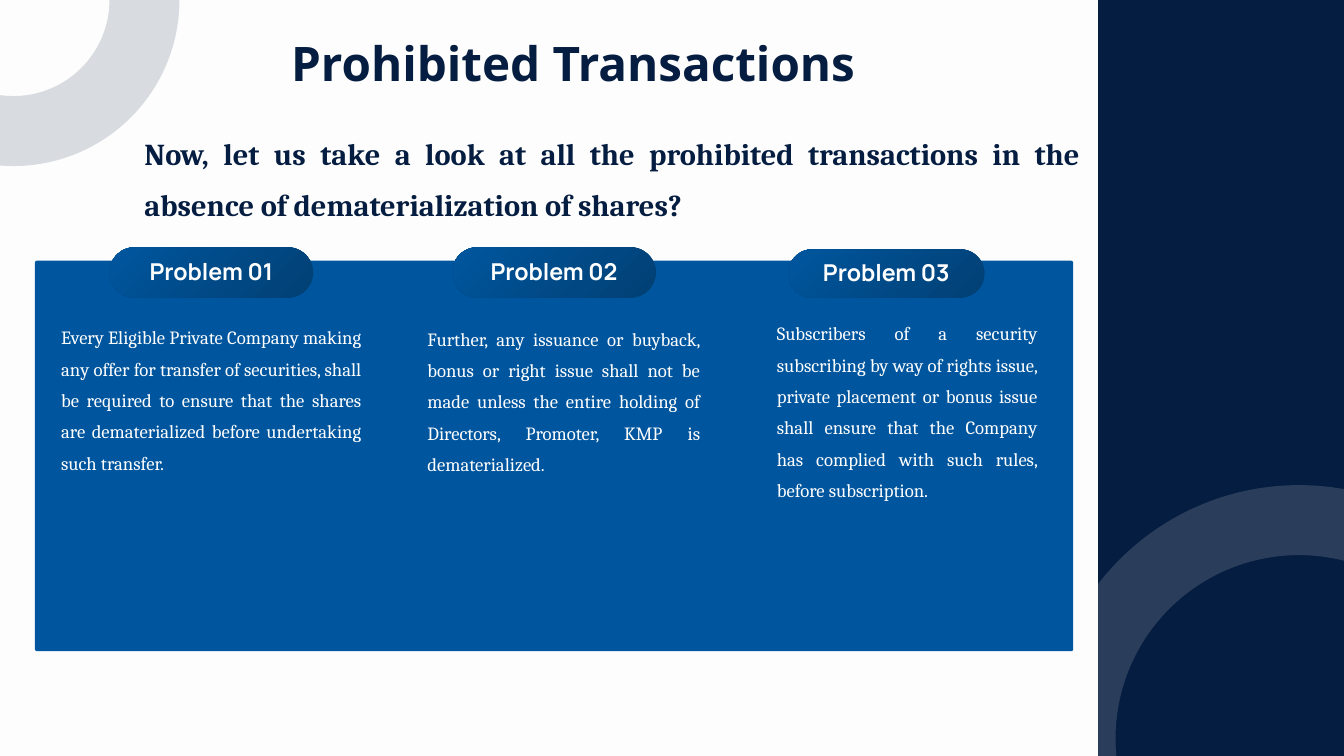
"""Build the slide on transactions prohibited without dematerialized shares."""
from dataclasses import dataclass

import pptx
import pptx.dml.color
import pptx.enum.shapes
import pptx.enum.text
import pptx.oxml
import pptx.oxml.ns
import pptx.util
from pptx.shapes.autoshape import Shape
from pptx.slide import Slide

Inches = pptx.util.Inches
RGBColor = pptx.dml.color.RGBColor
ShapeKind = pptx.enum.shapes.MSO_SHAPE
Align = pptx.enum.text.PP_ALIGN
Anchor = pptx.enum.text.MSO_ANCHOR
qn = pptx.oxml.ns.qn

NAVY = RGBColor(0x05, 0x1D, 0x40)
BLUE = RGBColor(0x00, 0x56, 0x9E)
DEEP_BLUE = RGBColor(0x01, 0x40, 0x74)
WHITE = RGBColor(0xFF, 0xFF, 0xFF)
PAPER = RGBColor(0xFD, 0xFD, 0xFD)


@dataclass(frozen=True)
class Box:
    left: float
    top: float
    width: float
    height: float

    def lengths(self) -> list[pptx.util.Length]:
        return [Inches(n) for n in (self.left, self.top, self.width, self.height)]


@dataclass(frozen=True)
class Style:
    font: str
    size: float
    color: RGBColor
    bold: bool
    align: Align
    anchor: Anchor = Anchor.TOP


@dataclass(frozen=True)
class Problem:
    label: str
    pill: Box
    body: Box
    text: str


TITLE = Style("Open Sans", 51, NAVY, True, Align.CENTER)
QUESTION = Style("Cambria", 32.5, NAVY, True, Align.JUSTIFY)
LABEL = Style("Manrope", 24.9, WHITE, True, Align.CENTER, Anchor.MIDDLE)
BODY = Style("Cambria", 20, PAPER, False, Align.JUSTIFY)
LABEL_RISE = 0.2

PROBLEMS = [
    Problem(
        "Problem 01", Box(1.63, 3.68, 3.03, 0.75), Box(0.91, 4.72, 4.47, 2.36),
        "Every Eligible Private Company making any offer for transfer of securities, "
        "shall be required to ensure that the shares are dematerialized before "
        "undertaking such transfer.",
    ),
    Problem(
        "Problem 02", Box(6.73, 3.68, 3.03, 0.75), Box(6.36, 4.74, 4.06, 2.36),
        "Further, any issuance or buyback, bonus or right issue shall not be made "
        "unless the entire holding of Directors, Promoter, KMP is dematerialized.",
    ),
    Problem(
        "Problem 03", Box(11.73, 3.71, 2.92, 0.72), Box(11.56, 4.66, 3.88, 2.83),
        "Subscribers of a security subscribing by way of rights issue, private "
        "placement or bonus issue shall ensure that the Company has complied with "
        "such rules, before subscription.",
    ),
]


def add_block(slide: Slide, kind: ShapeKind, box: Box, color: RGBColor) -> Shape:
    block = slide.shapes.add_shape(kind, *box.lengths())
    block.shadow.inherit = False
    block.fill.solid()
    block.fill.fore_color.rgb = color
    block.line.fill.background()
    return block


def add_ring(slide: Slide, box: Box, color: RGBColor) -> None:
    ring = slide.shapes.add_shape(ShapeKind.OVAL, *box.lengths())
    ring.shadow.inherit = False
    ring.fill.background()
    ring.line.width = pptx.util.Pt(75)
    ring.line.color.rgb = color
    stroke = ring.line._get_or_add_ln().find(f".//{qn('a:srgbClr')}")
    pptx.oxml.ns.qn
    alpha = stroke.makeelement(qn("a:alpha"), {"val": "15000"})
    stroke.append(alpha)


def add_pill(slide: Slide, box: Box) -> None:
    pill = add_block(slide, ShapeKind.ROUNDED_RECTANGLE, box, BLUE)
    pill.adjustments[0] = 0.5
    pill.fill.gradient()
    for stop, color in zip(pill.fill.gradient_stops, (BLUE, DEEP_BLUE)):
        stop.color.rgb = color
    gradient = pill._element.spPr.find(qn("a:gradFill"))
    linear = gradient.find(qn("a:lin"))
    radial = gradient.makeelement(qn("a:path"), {"path": "circle"})
    focus = gradient.makeelement(qn("a:fillToRect"), {"r": "100000", "b": "100000"})
    radial.append(focus)
    gradient.replace(linear, radial)


def add_text(slide: Slide, box: Box, text: str, style: Style) -> None:
    frame = slide.shapes.add_textbox(*box.lengths()).text_frame
    frame.word_wrap = True
    frame.vertical_anchor = style.anchor
    frame.margin_left = frame.margin_right = Inches(0)
    frame.margin_top = frame.margin_bottom = Inches(0)
    paragraph = frame.paragraphs[0]
    paragraph.alignment = style.align
    paragraph.line_spacing = 1.4
    run = paragraph.add_run()
    run.text = text
    run.font.name = style.font
    run.font.size = pptx.util.Pt(style.size)
    run.font.bold = style.bold
    run.font.color.rgb = style.color


def add_problem_label(slide: Slide, problem: Problem) -> None:
    pill = problem.pill
    add_pill(slide, pill)
    label = Box(pill.left, pill.top - LABEL_RISE, pill.width, pill.height + LABEL_RISE)
    add_text(slide, label, problem.label, LABEL)


def main() -> None:
    deck = pptx.Presentation()
    deck.slide_width, deck.slide_height = Inches(20), Inches(11.25)
    slide = deck.slides.add_slide(deck.slide_layouts[6])
    slide.background.fill.solid()
    slide.background.fill.fore_color.rgb = PAPER

    add_block(slide, ShapeKind.RECTANGLE, Box(16.34, 0, 3.66, 11.25), NAVY)
    add_text(slide, Box(2.4, 0.16, 12.26, 0.96), "Prohibited Transactions", TITLE)
    add_ring(slide, Box(-1.75, -1.95, 3.9, 3.9), NAVY)
    add_text(
        slide, Box(2.15, 1.8, 13.92, 1.82),
        "Now, let us take a look at all the prohibited transactions in the absence "
        "of dematerialization of shares?",
        QUESTION,
    )
    add_ring(slide, Box(16.08, 7.74, 6.5, 6.5), WHITE)

    panel = add_block(
        slide, ShapeKind.ROUNDED_RECTANGLE, Box(0.52, 3.88, 15.45, 5.81), BLUE
    )
    panel.adjustments[0] = 0.005
    for problem in PROBLEMS:
        add_problem_label(slide, problem)
    for problem in PROBLEMS:
        add_text(slide, problem.body, problem.text, BODY)

    deck.save("out.pptx")


if __name__ == "__main__":
    main()
